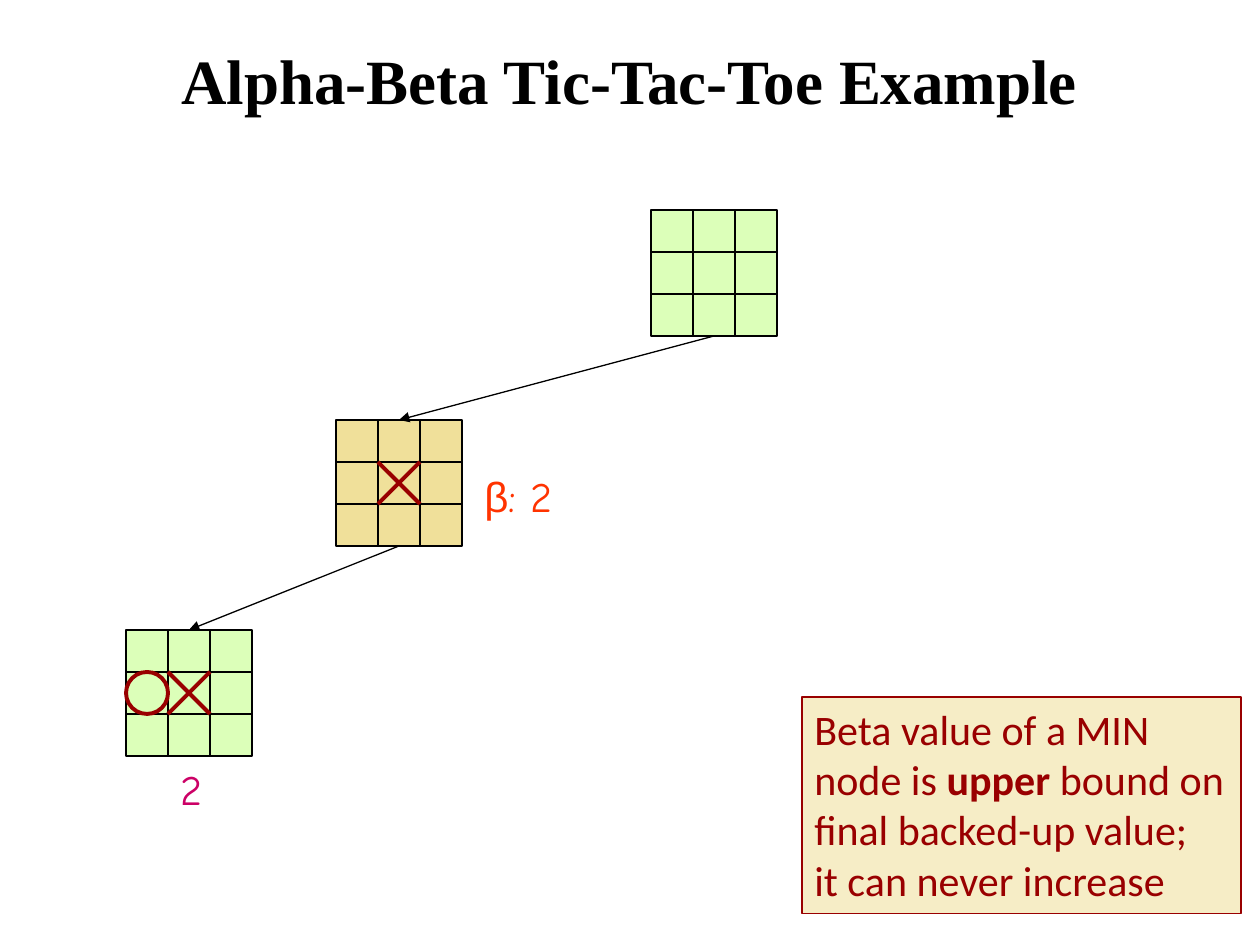
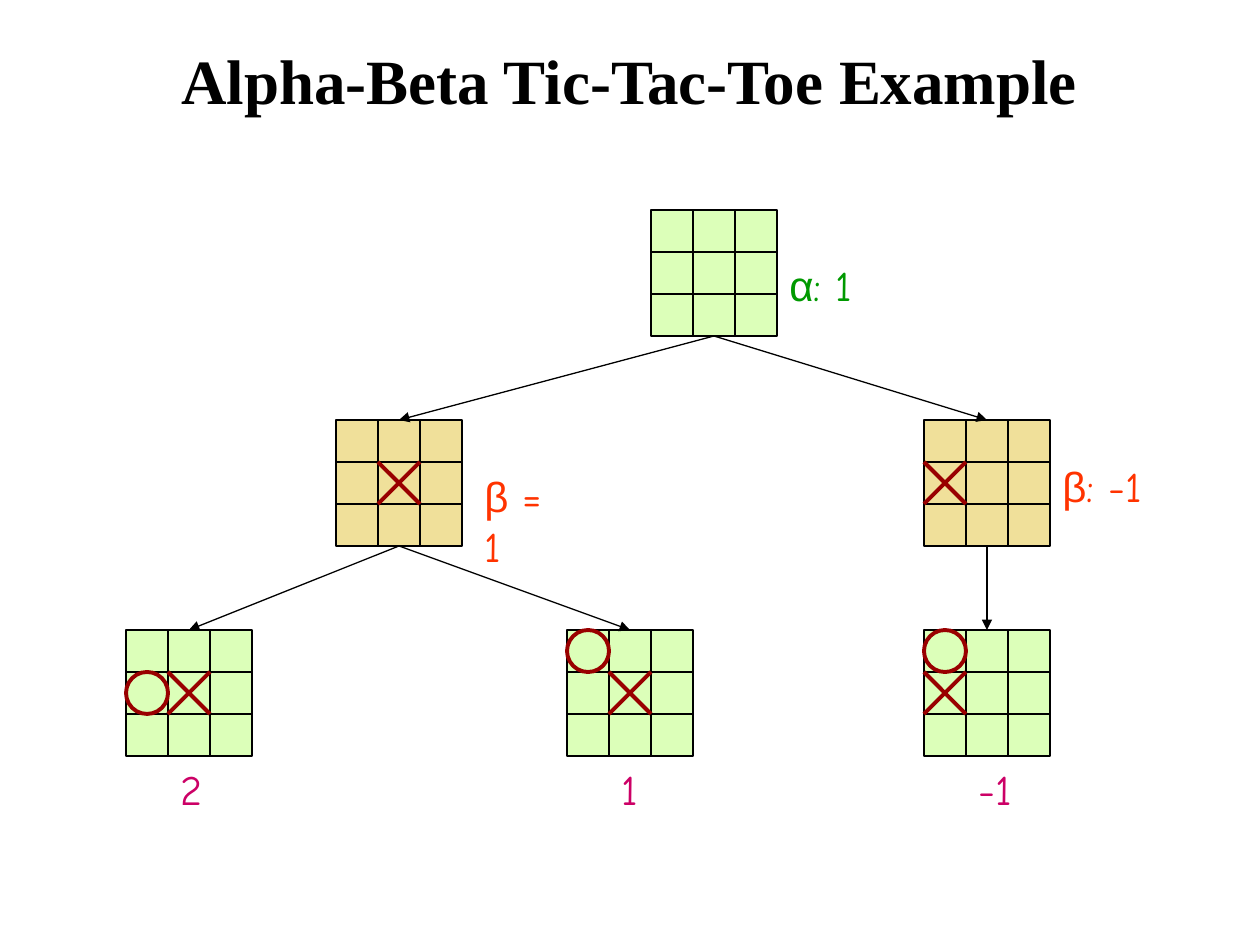
"""Build two slides that step through alpha-beta pruning on a tic-tac-toe tree."""
from lxml import etree
from pptx import Presentation
from pptx.dml.color import RGBColor
from pptx.enum.shapes import MSO_CONNECTOR, MSO_SHAPE
from pptx.enum.text import MSO_ANCHOR, MSO_AUTO_SIZE, PP_ALIGN
from pptx.oxml.ns import qn
from pptx.util import Pt

STRAIGHT = MSO_CONNECTOR.STRAIGHT
RECTANGLE, OVAL = MSO_SHAPE.RECTANGLE, MSO_SHAPE.OVAL
TOP, MIDDLE = MSO_ANCHOR.TOP, MSO_ANCHOR.MIDDLE
LEFT, CENTER = PP_ALIGN.LEFT, PP_ALIGN.CENTER
GROW = MSO_AUTO_SIZE.SHAPE_TO_FIT_TEXT

PX = 7257
CELL = 42
BOARD = 3 * CELL
rgb = RGBColor.from_string

BLACK, DARK_RED = "000000", "990000"
MAX_FILL, MIN_FILL, NOTE_FILL = "DCFFB9", "F0E09A", "F6EDC6"
ALPHA_COLOR, BETA_COLOR, SCORE_COLOR = "009900", "FF3300", "CC0066"
TITLE_FONT, GREEK_FONT, VALUE_FONT, NOTE_FONT = "Times New Roman", "Arial", "Comic Neue", "Calibri"


def add_line(slide, start, end, color=BLACK, width=0.75, arrow=False):
    line = slide.shapes.add_connector(STRAIGHT, *(value * PX for value in start + end))
    line.line.color.rgb = rgb(color)
    line.line.width = Pt(width)
    if arrow:
        etree.SubElement(line.line._get_or_add_ln(), qn("a:tailEnd"), type="triangle")
    etree.SubElement(line._element.spPr, qn("a:effectLst"))


def add_text(slide, box, lines, color, size=24, align=LEFT, anchor=TOP):
    shape = slide.shapes.add_textbox(*(value * PX for value in box))
    frame = shape.text_frame
    frame.word_wrap = False
    frame.vertical_anchor = anchor
    if anchor == TOP:
        frame.auto_size = GROW
    frame.text = "\n" * (len(lines) - 1)
    for paragraph, pieces in zip(frame.paragraphs, lines):
        paragraph.alignment = align
        for text, font_name, bold in pieces:
            run = paragraph.add_run()
            run.text = text
            run.font.name = font_name
            run.font.size = Pt(size)
            run.font.bold = bold
            run.font.color.rgb = rgb(color)
    return shape


# name: left, top, fill, parent, cross (column, row), circle (column, row)
BOARDS = {
    "root": (651, 210, MAX_FILL, None, None, None),
    "center": (336, 420, MIN_FILL, "root", (1, 1), None),
    "side": (924, 420, MIN_FILL, "root", (0, 1), None),
    "center, circle at side": (126, 630, MAX_FILL, "center", (1, 1), (0, 1)),
    "center, circle in corner": (567, 630, MAX_FILL, "center", (1, 1), (0, 0)),
    "side, circle in corner": (924, 630, MAX_FILL, "side", (0, 1), (0, 0)),
}
SCORES = {
    "center, circle at side": ("2", 168, 50),
    "center, circle in corner": ("1", 609, 44),
    "side, circle in corner": ("-1", 966, 62),
}
NOTE_LINES = [
    [("Beta value of a MIN", NOTE_FONT, False)],
    [("node is ", NOTE_FONT, False), ("upper", NOTE_FONT, True), (" bound on", NOTE_FONT, False)],
    [("final backed-up value;", NOTE_FONT, False)],
    [("it can never increase", NOTE_FONT, False)],
]
STEPS = [
    {
        "boards": ["root", "center", "center, circle at side"],
        "bounds": [("β", ": 2", BETA_COLOR, (472, 464, 100, 63))],
        "note": NOTE_LINES,
    },
    {
        "boards": list(BOARDS),
        "bounds": [
            ("α", ": 1", ALPHA_COLOR, (777, 253, 96, 63)),
            ("β", " = 1", BETA_COLOR, (472, 464, 113, 63)),
            ("β", ": -1", BETA_COLOR, (1050, 454, 123, 63)),
        ],
        "note": None,
    },
]

presentation = Presentation()
presentation.slide_width = 1260 * PX
presentation.slide_height = 945 * PX

for step in STEPS:
    slide = presentation.slides.add_slide(presentation.slide_layouts[6])
    title = [[("Alpha-Beta Tic-Tac-Toe Example", TITLE_FONT, True)]]
    add_text(slide, (94, 0, 1071, 158), title, BLACK, 36, CENTER, MIDDLE)

    for name in step["boards"]:
        left, top, fill, parent, cross, circle = BOARDS[name]
        square = slide.shapes.add_shape(RECTANGLE, left * PX, top * PX, BOARD * PX, BOARD * PX)
        square.shadow.inherit = False
        square.fill.solid()
        square.fill.fore_color.rgb = rgb(fill)
        square.line.color.rgb = rgb(BLACK)
        square.line.width = Pt(0.75)
        for offset in (CELL, 2 * CELL):
            add_line(slide, (left + offset, top), (left + offset, top + BOARD))
            add_line(slide, (left, top + offset), (left + BOARD, top + offset))
        if cross:
            x, y = left + cross[0] * CELL, top + cross[1] * CELL
            add_line(slide, (x, y), (x + CELL, y + CELL), DARK_RED, 2.25)
            add_line(slide, (x, y + CELL), (x + CELL, y), DARK_RED, 2.25)
        if circle:
            x, y = left + circle[0] * CELL, top + circle[1] * CELL
            ring = slide.shapes.add_shape(OVAL, x * PX, y * PX, CELL * PX, CELL * PX)
            ring.shadow.inherit = False
            ring.fill.background()
            ring.line.color.rgb = rgb(DARK_RED)
            ring.line.width = Pt(2.25)
        if parent:
            parent_left, parent_top = BOARDS[parent][:2]
            start = (parent_left + BOARD // 2, parent_top + BOARD)
            add_line(slide, start, (left + BOARD // 2, top), arrow=True)
        if name in SCORES:
            score, score_left, width = SCORES[name]
            box = (score_left, top + BOARD + 1, width, 63)
            add_text(slide, box, [[(score, VALUE_FONT, False)]], SCORE_COLOR)

    for letter, value, color, box in step["bounds"]:
        add_text(slide, box, [[(letter, GREEK_FONT, False), (value, VALUE_FONT, False)]], color)

    if step["note"]:
        note = add_text(slide, (802, 697, 439, 217), step["note"], DARK_RED)
        note.fill.solid()
        note.fill.fore_color.rgb = rgb(NOTE_FILL)
        note.line.color.rgb = rgb(DARK_RED)
        note.line.width = Pt(0.75)

presentation.save("out.pptx")
